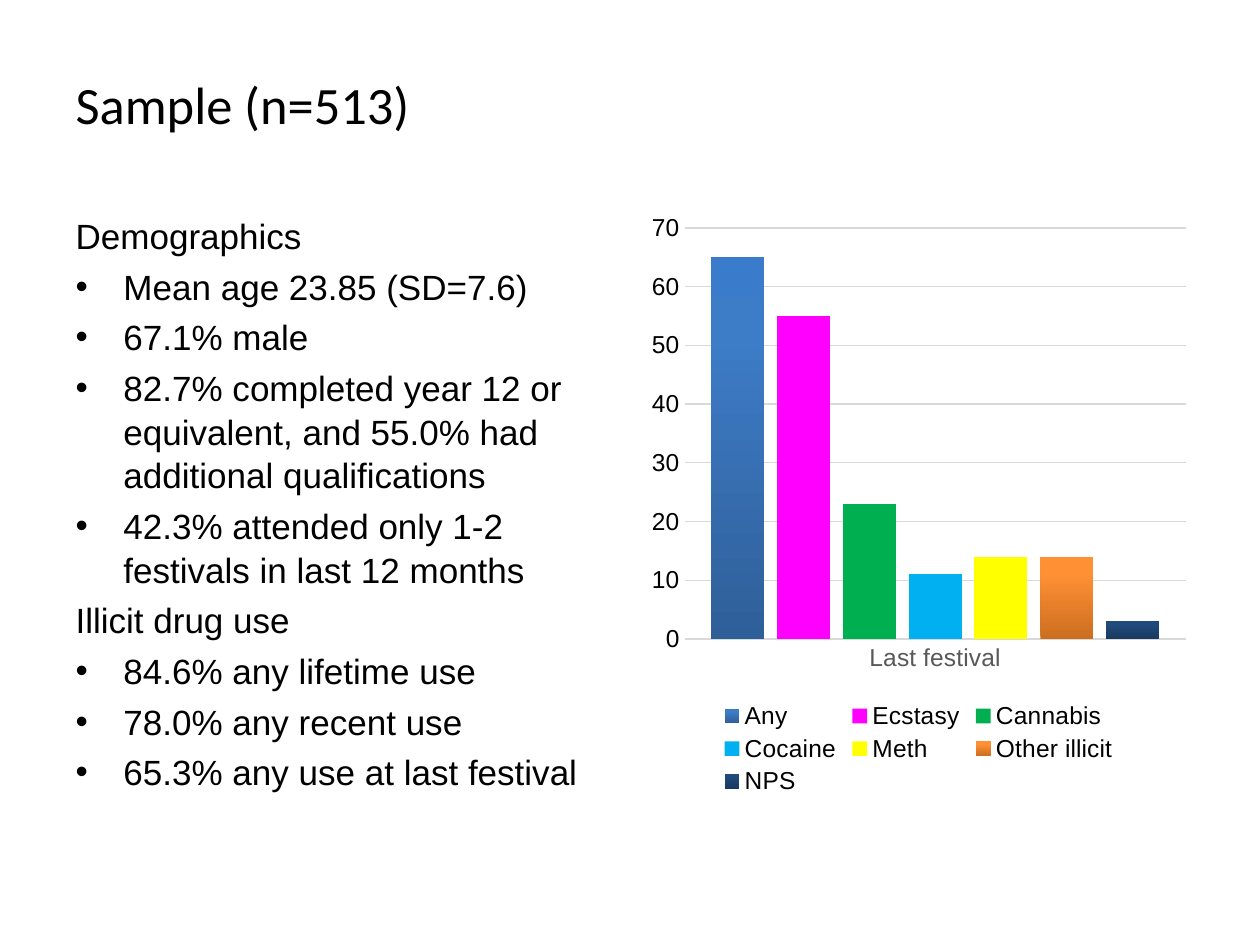
from copy import deepcopy
from lxml.etree import SubElement
from pptx import Presentation
from pptx.chart.data import CategoryChartData
from pptx.dml.color import RGBColor
from pptx.enum.chart import XL_CHART_TYPE, XL_LEGEND_POSITION, XL_TICK_MARK
from pptx.enum.text import MSO_ANCHOR, MSO_AUTO_SIZE, PP_ALIGN
from pptx.oxml.ns import qn
from pptx.util import Inches, Pt

TITLE = "Sample (n=513)"
GROUPS = [
    ("Demographics", [
        "Mean age 23.85 (SD=7.6)",
        "67.1% male",
        "82.7% completed year 12 or equivalent, and 55.0% had additional qualifications",
        "42.3% attended only 1-2 festivals in last 12 months",
    ]),
    ("Illicit drug use", [
        "84.6% any lifetime use",
        "78.0% any recent use",
        "65.3% any use at last festival",
    ]),
]
# Name, value, fill colours (three colours run from the bar's foot to its top)
DRUGS = [
    ("Any", 65, ["2F5F99", "3D7CC7", "3A7CCB"]),
    ("Ecstasy", 55, ["FF00FF"]),
    ("Cannabis", 23, ["00B050"]),
    ("Cocaine", 11, ["00B0F0"]),
    ("Meth", 14, ["FFFF00"]),
    ("Other illicit", 14, ["CC6E20", "FF9034", "FF9136"]),
    ("NPS", 3, ["19395F", "204A7C", "1E4A7E"]),
]
STOPS = (0, 0.8, 1)
THEME = {
    "head": "Calibri", "body": "Arial",
    "ink": "000000", "soft": "595959", "rule": "D9D9D9",
    "title": 30, "text": 20, "chart": 14,
}
BOXES = {
    "title": (0.5, 0.52, 9, 0.87),
    "body": (0.5, 1.64, 4.42, 4.71),
    "chart": (5.08, 1.62, 4.42, 4.73),
}
PLOT = {"x": 0.08, "y": 0.04, "w": 0.9, "h": 0.69}
INDENT = Inches(0.38)


def color(name):
    return RGBColor.from_string(THEME.get(name, name))


def style(font, face, size, ink="ink"):
    font.name, font.size = THEME[face], Pt(THEME[size])
    font.color.rgb = color(ink)


def place(shape, key):
    shape.left, shape.top, shape.width, shape.height = map(Inches, BOXES[key])
    frame = shape.text_frame
    frame.word_wrap = True
    frame.auto_size = MSO_AUTO_SIZE.NONE
    frame.vertical_anchor = MSO_ANCHOR.TOP
    return frame


def write(para, text, face, size):
    run = para.add_run()
    run.text = text
    style(run.font, face, size)


def mark(para, listed):
    """Give a paragraph a hanging bullet, or none for a heading."""
    props = para._p.get_or_add_pPr()
    props.set("marL", str(INDENT if listed else 0))
    props.set("indent", str(-INDENT if listed else 0))
    if listed:
        SubElement(props, qn("a:buFont"), typeface=THEME["body"])
        SubElement(props, qn("a:buChar"), char="•")
    else:
        SubElement(props, qn("a:buNone"))


def fill_list(frame):
    lines = [(text, listed) for head, items in GROUPS
             for text, listed in [(head, False)] + [(i, True) for i in items]]
    for i, (text, listed) in enumerate(lines):
        para = frame.add_paragraph() if i else frame.paragraphs[0]
        mark(para, listed)
        para.line_spacing = 1.04
        para.space_before = Pt(4 if i else 0)
        write(para, text, "body", "text")


def paint(bar, tones):
    fill = bar.format.fill
    if len(tones) == 1:
        fill.solid()
        fill.fore_color.rgb = color(tones[0])
        return
    fill.gradient()
    fill.gradient_angle = 90
    stops = bar._element.find(".//" + qn("a:gsLst"))
    stops.append(deepcopy(stops[0]))
    for stop, tone, at in zip(fill.gradient_stops, tones, STOPS):
        stop.color.rgb = color(tone)
        stop.position = at


def fix_plot(chart):
    """Pin the inner plot area to set fractions of the chart."""
    area = chart._chartSpace.chart.plotArea
    old = area.find(qn("c:layout"))
    if old is not None:
        area.remove(old)
    layout = SubElement(area, qn("c:layout"))
    area.insert(0, layout)
    manual = SubElement(layout, qn("c:manualLayout"))
    parts = [("layoutTarget", "inner"), ("xMode", "edge"), ("yMode", "edge")]
    for tag, val in parts + list(PLOT.items()):
        SubElement(manual, qn("c:" + tag), val=str(val))


def add_bars(slide):
    data = CategoryChartData()
    data.categories = ["Last festival"]
    for name, val, _ in DRUGS:
        data.add_series(name, [val])
    chart = slide.shapes.add_chart(
        XL_CHART_TYPE.COLUMN_CLUSTERED, *map(Inches, BOXES["chart"]), data).chart
    style(chart.font, "body", "chart")
    chart.has_title = False
    chart.has_legend = True
    chart.legend.position = XL_LEGEND_POSITION.BOTTOM
    chart.legend.include_in_layout = False
    style(chart.legend.font, "body", "chart")

    plot = chart.plots[0]
    plot.gap_width, plot.overlap, plot.vary_by_categories = 100, -24, False
    for bar, (_, _, tones) in zip(plot.series, DRUGS):
        bar.invert_if_negative = False
        paint(bar, tones)

    cat, val = chart.category_axis, chart.value_axis
    for axis, ink in ((cat, "soft"), (val, "ink")):
        axis.major_tick_mark = axis.minor_tick_mark = XL_TICK_MARK.NONE
        style(axis.tick_labels.font, "body", "chart", ink)
    val.minimum_scale, val.maximum_scale, val.major_unit = 0, 70, 10
    val.format.line.fill.background()
    val.has_major_gridlines = True
    for line, width in ((cat.format.line, 1), (val.major_gridlines.format.line, 0.75)):
        line.color.rgb = color("rule")
        line.width = Pt(width)
    fix_plot(chart)


def main():
    deck = Presentation()
    deck.slide_width, deck.slide_height = Inches(10), Inches(7.5)
    slide = deck.slides.add_slide(deck.slide_layouts[1])
    fill_list(place(slide.placeholders[1], "body"))
    para = place(slide.shapes.title, "title").paragraphs[0]
    para.alignment = PP_ALIGN.LEFT
    write(para, TITLE, "head", "title")
    add_bars(slide)
    deck.save("out.pptx")


if __name__ == "__main__":
    main()
